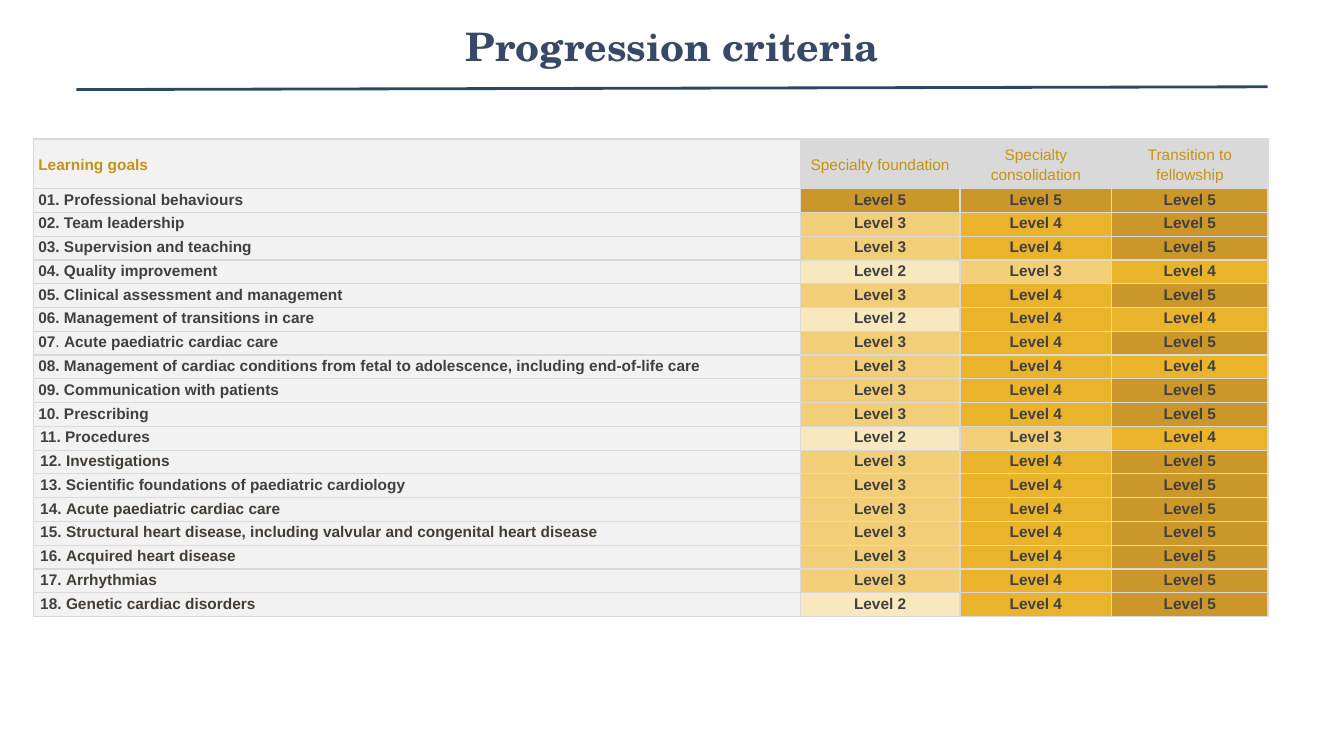
from lxml.etree import SubElement
from pptx import Presentation
from pptx.dml.color import RGBColor as RGB
from pptx.enum.shapes import MSO_CONNECTOR as Conn
from pptx.enum.text import MSO_ANCHOR as Anchor, MSO_AUTO_SIZE as Fit, PP_ALIGN as Align
from pptx.oxml.ns import qn
from pptx.util import Pt

COLORS = {
    "title": "384967", "rule": "294864", "gold": "C69214", "text": "404040",
    "brown": "433E35", "goal": "F2F2F2", "head": "D9D9D9", "edge": "D9D9D9",
}
SHADES = {2: "F8E8C0", 3: "F1CE77", 4: "E9B32B", 5: "CB972B"}
HEADS = ["Learning goals", "Specialty foundation", "Specialty consolidation",
         "Transition to fellowship"]
GOALS = [
    ("Professional behaviours", (5, 5, 5)),
    ("Team leadership", (3, 4, 5)),
    ("Supervision and teaching", (3, 4, 5)),
    ("Quality improvement", (2, 3, 4)),
    ("Clinical assessment and management", (3, 4, 5)),
    ("Management of transitions in care", (2, 4, 4)),
    ("Acute paediatric cardiac care", (3, 4, 5)),
    ("Management of cardiac conditions from fetal to adolescence, "
     "including end-of-life care", (3, 4, 4)),
    ("Communication with patients", (3, 4, 5)),
    ("Prescribing", (3, 4, 5)),
    ("Procedures", (2, 3, 4)),
    ("Investigations", (3, 4, 5)),
    ("Scientific foundations of paediatric cardiology", (3, 4, 5)),
    ("Acute paediatric cardiac care", (3, 4, 5)),
    ("Structural heart disease, including valvular and congenital heart disease",
     (3, 4, 5)),
    ("Acquired heart disease", (3, 4, 5)),
    ("Arrhythmias", (3, 4, 5)),
    ("Genetic cardiac disorders", (2, 4, 5)),
]
WIDTHS = [548, 114, 108.5, 111.5]
HEAD_H = 35.5


def style(font, name, size, color, bold=True):
    font.name, font.size, font.bold = name, Pt(size), bold
    font.color.rgb = RGB.from_string(COLORS[color])


def add_title(slide, text, left, top, width, height):
    title = slide.shapes.title
    title.left, title.top, title.width, title.height = map(Pt, (left, top, width, height))
    frame = title.text_frame
    frame.text = text
    frame.auto_size = Fit.NONE
    frame.vertical_anchor = Anchor.TOP
    para = frame.paragraphs[0]
    para.alignment = Align.CENTER
    style(para.runs[0].font, "TeX Gyre Schola", 28, "title")


def add_rule(slide, left, top, width, rise):
    line = slide.shapes.add_connector(
        Conn.STRAIGHT, Pt(left), Pt(top + rise), Pt(left + width), Pt(top))
    line.line.width = Pt(2)
    line.line.color.rgb = RGB.from_string(COLORS["rule"])
    SubElement(line._element.spPr, qn("a:effectLst"))


def add_edges(cell):
    props = cell._tc.get_or_add_tcPr()
    for at, side in enumerate(("lnL", "lnR", "lnT", "lnB")):
        edge = props.makeelement(qn(f"a:{side}"), {"w": str(Pt(1))})
        props.insert(at, edge)
        fill = SubElement(edge, qn("a:solidFill"))
        SubElement(fill, qn("a:srgbClr"), val=COLORS["edge"])


def fill_cell(cell, parts, fill, center=True, inset=3.6, anchor=Anchor.TOP):
    """Write parts, a list of (text, color, bold), and dress the cell."""
    cell.margin_left = cell.margin_right = Pt(inset)
    cell.margin_top = cell.margin_bottom = 0
    cell.vertical_anchor = anchor
    cell.fill.solid()
    cell.fill.fore_color.rgb = RGB.from_string(fill)
    para = cell.text_frame.paragraphs[0]
    para.alignment = Align.CENTER if center else Align.LEFT
    para.line_spacing = 1.15
    for text, color, bold in parts:
        run = para.add_run()
        run.text = text
        style(run.font, "Arial", 11, color, bold)
    add_edges(cell)


def add_goals(slide, left, top, width, height):
    frame = slide.shapes.add_table(
        len(GOALS) + 1, len(HEADS), Pt(left), Pt(top), Pt(width), Pt(height))
    table = frame.table
    table.first_row = table.horz_banding = False
    for col, size in zip(table.columns, WIDTHS):
        col.width = Pt(size * width / sum(WIDTHS))
    for row in table.rows:
        row.height = Pt((height - HEAD_H) / len(GOALS))
    table.rows[0].height = Pt(HEAD_H)

    for col, text in enumerate(HEADS):
        first = col == 0
        fill_cell(table.cell(0, col), [(text, "gold", first)],
                  COLORS["goal" if first else "head"], not first, anchor=Anchor.MIDDLE)

    for num, (goal, levels) in enumerate(GOALS, 1):
        color = "brown" if num == 12 or num > 13 else "text"
        parts = [(f"{num:02}", "text", True), (". ", "text", num != 7),
                 (goal, color, True)]
        fill_cell(table.cell(num, 0), parts, COLORS["goal"], False,
                  5 if num > 10 else 3.6)
        for col, level in enumerate(levels, 1):
            fill_cell(table.cell(num, col), [(f"Level {level}", "text", True)],
                      SHADES[level])


def main():
    deck = Presentation()
    deck.slide_width, deck.slide_height = Pt(960), Pt(540)
    slide = deck.slides.add_slide(deck.slide_layouts[5])
    add_title(slide, "Progression criteria", 156, 12, 648, 90)
    add_rule(slide, 54.5, 62, 851, 2)
    add_goals(slide, 23.75, 99.25, 882, 341.5)
    deck.save("out.pptx")


if __name__ == "__main__":
    main()
